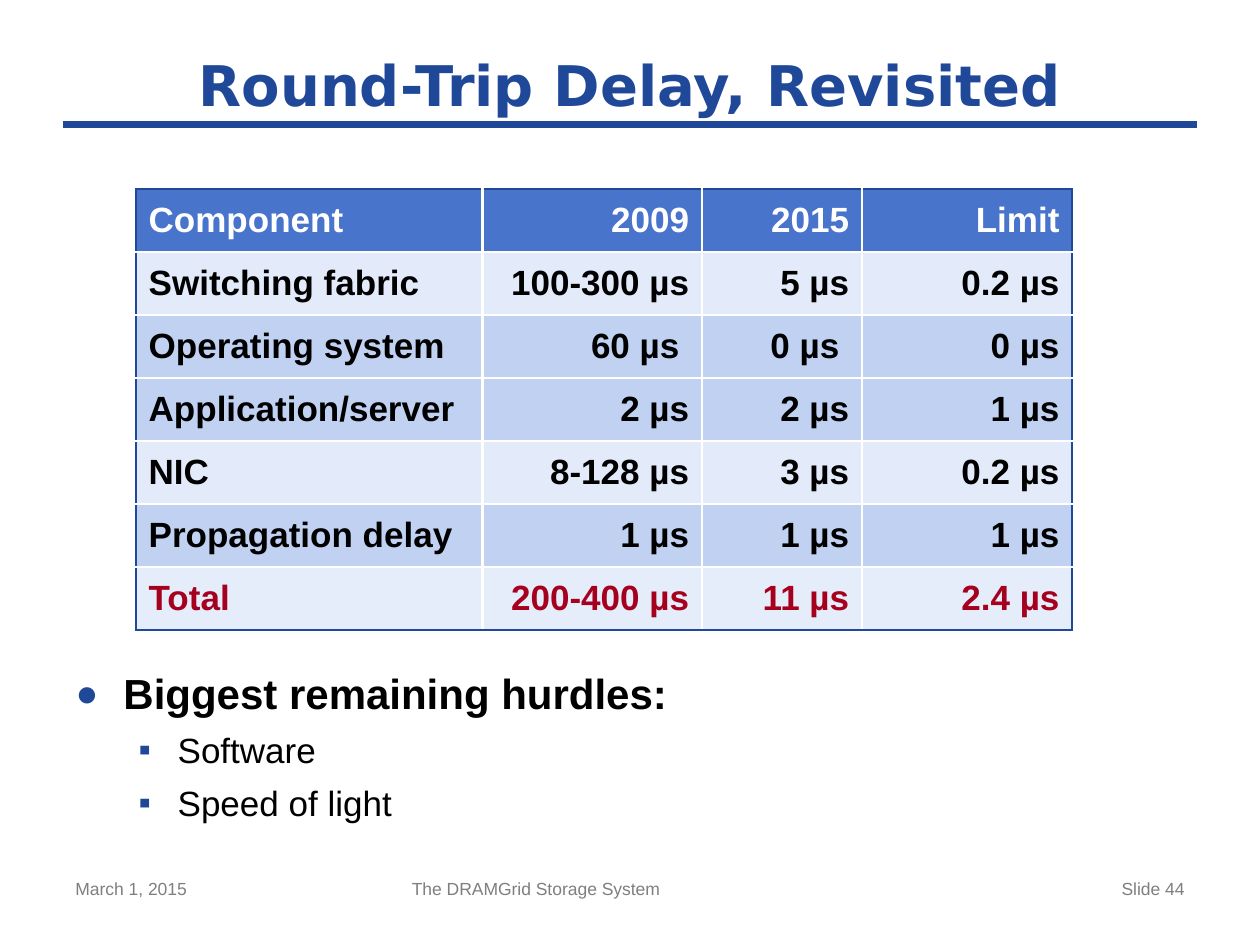
from lxml import etree
from pptx import Presentation
from pptx.dml.color import RGBColor
from pptx.enum.text import MSO_ANCHOR, MSO_AUTO_SIZE, PP_ALIGN
from pptx.oxml.ns import qn
from pptx.util import Inches, Pt

LEFT, CENTER, RIGHT = PP_ALIGN.LEFT, PP_ALIGN.CENTER, PP_ALIGN.RIGHT
TOP, MIDDLE = MSO_ANCHOR.TOP, MSO_ANCHOR.MIDDLE
NO_AUTOFIT = MSO_AUTO_SIZE.NONE

WIDTH, HEIGHT = 10, 7.5
MARGIN = 0.05 * WIDTH
CONTENT_WIDTH = WIDTH - 2 * MARGIN
NAVY, WHITE, BLACK, GRAY, RED = "1F4899", "FFFFFF", "000000", "7F7F7F", "A5001E"
HEADER_FILL, LIGHT, MEDIUM, TOTAL_FILL = "4974CB", "E3EAF9", "C0D1F2", "E6EDFA"

COLUMN_WIDTHS = [2.75, 1.74, 1.27, 1.67]
ROW_HEIGHT = 0.5
DELAYS = [
    (HEADER_FILL, WHITE, ["Component", "2009", "2015", "Limit"]),
    (LIGHT, BLACK, ["Switching fabric", "100-300 µs", "5 µs", "0.2 µs"]),
    (MEDIUM, BLACK, ["Operating system", "60 µs ", "0 µs ", "0 µs"]),
    (MEDIUM, BLACK, ["Application/server", "2 µs", "2 µs", "1 µs"]),
    (LIGHT, BLACK, ["NIC", "8-128 µs", "3 µs", "0.2 µs"]),
    (MEDIUM, BLACK, ["Propagation delay", "1 µs", "1 µs", "1 µs"]),
    (TOTAL_FILL, RED, ["Total", "200-400 µs", "11 µs", "2.4 µs"]),
]
HURDLES = [
    ("Biggest remaining hurdles:", 0),
    ("Software", 1),
    ("Speed of light", 1),
]
# level: size, bold, space before, left indent, hanging indent, bullet, bullet %
LEVELS = [
    (24, True, 12, 0.38, 0.38, "●", 90),
    (20, False, 6, 0.81, 0.31, "▪", 100),
]


def rgb(color):
    return RGBColor.from_string(color)


def add_xml(parent, tag, **attributes):
    return etree.SubElement(parent, qn(tag), attributes)


def style(paragraph, size, color, bold=False, font="Arial", align=LEFT):
    paragraph.alignment = align
    for run in paragraph.runs:
        run.font.size = Pt(size)
        run.font.bold = bold
        run.font.name = font
        run.font.color.rgb = rgb(color)


def place(shape, left, top, width, height, anchor):
    shape.left, shape.top = Inches(left), Inches(top)
    shape.width, shape.height = Inches(width), Inches(height)
    frame = shape.text_frame
    frame.word_wrap = True
    frame.auto_size = NO_AUTOFIT
    frame.vertical_anchor = anchor
    return frame


def add_title(slide, text):
    frame = place(slide.shapes.title, MARGIN, 0.33, CONTENT_WIDTH, 0.67, MIDDLE)
    frame.text = text
    style(frame.paragraphs[0], 32, NAVY, True, "DejaVu Sans", CENTER)


def add_title_rule(slide):
    y = Inches(0.99)
    rule = slide.shapes.add_connector(1, Inches(MARGIN), y, Inches(WIDTH - MARGIN), y)
    rule.line.color.rgb = rgb(NAVY)
    rule.line.width = Pt(4)
    add_xml(rule._element.spPr, "a:effectLst")


def set_bullet(paragraph, indent, hanging, character, percent):
    properties = paragraph._p.get_or_add_pPr()
    properties.set("marL", str(Inches(indent)))
    properties.set("indent", str(-Inches(hanging)))
    add_xml(add_xml(properties, "a:buClr"), "a:srgbClr", val=NAVY)
    add_xml(properties, "a:buSzPct", val=str(percent * 1000))
    add_xml(properties, "a:buFont", typeface="Arial")
    add_xml(properties, "a:buChar", char=character)


def add_hurdles(slide):
    body = slide.placeholders[1]
    frame = place(body, MARGIN, 0.7 * HEIGHT, CONTENT_WIDTH, 1.45, TOP)
    frame.text = "\n".join(text for text, _ in HURDLES)
    for paragraph, (_, level) in zip(frame.paragraphs, HURDLES):
        size, bold, space, *bullet = LEVELS[level]
        paragraph.level = level
        paragraph.space_before = Pt(space)
        style(paragraph, size, BLACK, bold)
        set_bullet(paragraph, *bullet)


def set_borders(cell, outer_sides):
    """Draw the outer sides in navy and the others in white."""
    properties = cell._tc.get_or_add_tcPr()
    for side in "LRTB":
        border = add_xml(properties, f"a:ln{side}", w=str(Pt(1.5)))
        color = NAVY if side in outer_sides else WHITE
        add_xml(add_xml(border, "a:solidFill"), "a:srgbClr", val=color)


def add_delay_table(slide):
    row_count, column_count = len(DELAYS), len(COLUMN_WIDTHS)
    table = slide.shapes.add_table(
        row_count, column_count, Inches(1.08), Inches(0.2 * HEIGHT),
        Inches(sum(COLUMN_WIDTHS)), Inches(row_count * ROW_HEIGHT)).table
    for column, width in zip(table.columns, COLUMN_WIDTHS):
        column.width = Inches(width)
    for r, (fill, color, values) in enumerate(DELAYS):
        table.rows[r].height = Inches(ROW_HEIGHT)
        for c, value in enumerate(values):
            cell = table.cell(r, c)
            edges = {"L": c == 0, "R": c == column_count - 1,
                     "T": r == 0, "B": r == row_count - 1}
            set_borders(cell, [side for side, outer in edges.items() if outer])
            cell.fill.solid()
            cell.fill.fore_color.rgb = rgb(fill)
            cell.vertical_anchor = MIDDLE
            cell.text = value
            style(cell.text_frame.paragraphs[0], 20, color, True,
                  align=RIGHT if c else LEFT)


def add_footer(slide, text, left, width, align=LEFT):
    box = slide.shapes.add_textbox(0, 0, 0, 0)
    frame = place(box, left, 6.92, width, 0.43, TOP)
    frame.text = text
    style(frame.paragraphs[0], 10, GRAY, align=align)


def main():
    presentation = Presentation()
    presentation.slide_width = Inches(WIDTH)
    presentation.slide_height = Inches(HEIGHT)
    slide = presentation.slides.add_slide(presentation.slide_layouts[1])
    add_title_rule(slide)
    add_title(slide, "Round-Trip Delay, Revisited")
    add_delay_table(slide)
    add_hurdles(slide)
    add_footer(slide, "March 1, 2015", MARGIN, 2.33)
    add_footer(slide, "The DRAMGrid Storage System", 3.17, 3.75)
    add_footer(slide, "Slide 44", 7.17, 2.33, RIGHT)
    presentation.save("out.pptx")


if __name__ == "__main__":
    main()
